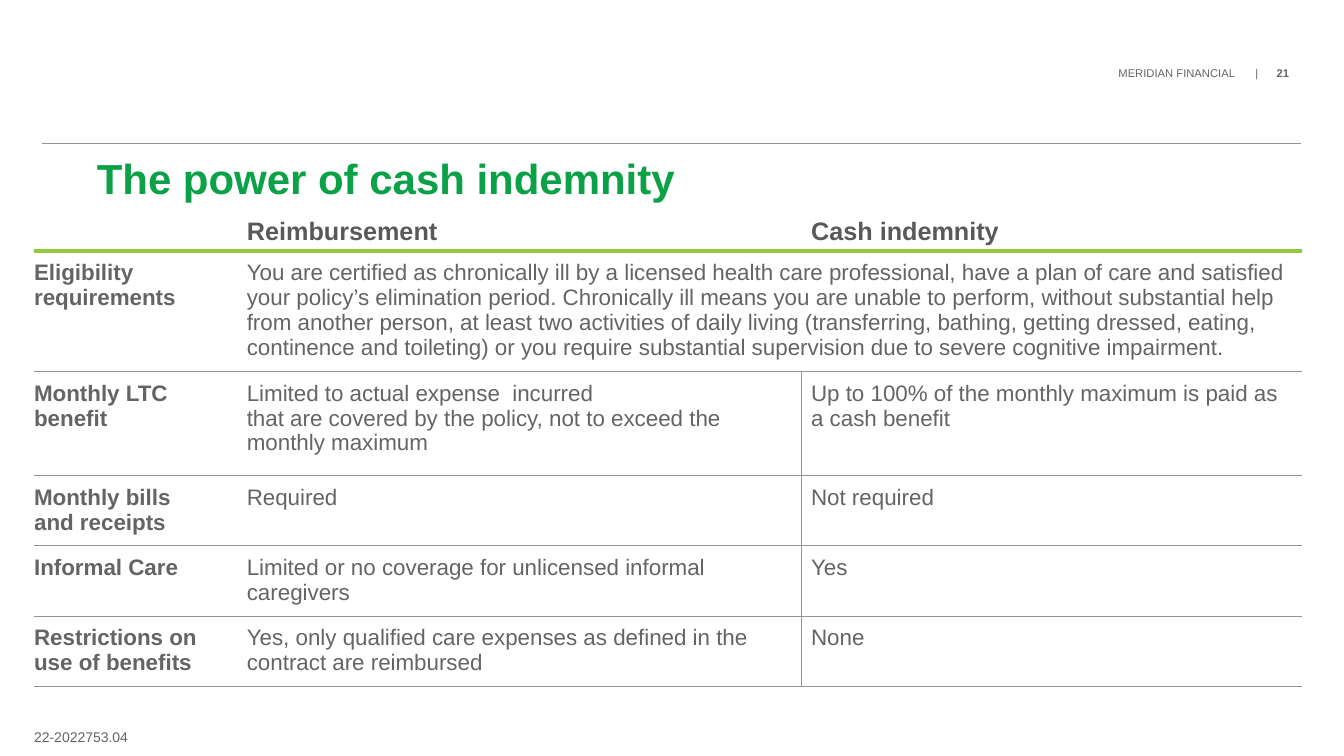
"""Build the slide comparing reimbursement with cash indemnity."""
from dataclasses import dataclass

from lxml import etree
from pptx import Presentation
from pptx import util as u
from pptx.dml.color import RGBColor
from pptx.enum import shapes, text
from pptx.oxml import ns

GREEN = RGBColor(0x0A, 0xA1, 0x47)
LIME = RGBColor(0x95, 0xC9, 0x3C)
HEAD = RGBColor(0x58, 0x59, 0x5B)
BODY = RGBColor(0x63, 0x64, 0x66)
RULE = RGBColor(0x92, 0x93, 0x97)
WHITE = RGBColor(0xFF, 0xFF, 0xFF)

COLUMNS = (5.11, 14.22, 12.6)
HEIGHTS = (1.52, 3.03, 2.63, 1.77, 1.77, 1.77)
ROWS = (
    ("", "Reimbursement", "Cash indemnity"),
    ("Eligibility requirements",
     "You are certified as chronically ill by a licensed health care professional, "
     "have a plan of care and satisfied your policy’s elimination period. "
     "Chronically ill means you are unable to perform, without substantial help from "
     "another person, at least two activities of daily living (transferring, bathing, "
     "getting dressed, eating, continence and toileting) or you require substantial "
     "supervision due to severe cognitive impairment.", ""),
    ("Monthly LTC benefit",
     "Limited to actual expense  incurred \vthat are covered by the policy, "
     "not to exceed the monthly maximum",
     "Up to 100% of the monthly maximum is paid as a cash benefit"),
    ("Monthly bills \vand receipts", "Required", "Not required"),
    ("Informal Care", "Limited or no coverage for unlicensed informal caregivers", "Yes"),
    ("Restrictions on \vuse of benefits",
     "Yes, only qualified care expenses as defined in the contract are reimbursed", "None"),
)


@dataclass
class Border:
    color: RGBColor
    width: float


THIN = Border(RULE, 0.5)
THICK = Border(LIME, 3)
BLANK = Border(WHITE, 1)


@dataclass
class Label:
    runs: tuple[tuple[str, bool], ...]
    left: float
    top: float
    width: float
    height: float
    size: float
    color: RGBColor
    format: dict
    anchor: text.MSO_ANCHOR = text.MSO_ANCHOR.TOP
    tabs: tuple[float, ...] = ()


LABELS = (
    Label((("MERIDIAN FINANCIAL\t|\t", False), ("21", True)), 26.75, 1.68, 5.74, 0.38,
          8, BODY, {"alignment": text.PP_ALIGN.RIGHT}, tabs=(3.45, 3.99)),
    Label((("The power of cash indemnity", True),), 2.44, 4.01, 27.13, 1.55,
          30, GREEN, {"line_spacing": u.Pt(31)}),
    Label((("22-2022753.04", False),), 0.86, 18.36, 6.83, 0.43,
          10, BODY, {}, text.MSO_ANCHOR.BOTTOM),
)


def apply(target: object, values: dict) -> None:
    """Set each named attribute on the target."""
    for name, value in values.items():
        setattr(target, name, value)


def style(font: object, size: float, bold: bool, color: RGBColor) -> None:
    """Set the typeface, size, weight and colour."""
    apply(font, {"name": "Arial", "size": u.Pt(size), "bold": bold})
    font.color.rgb = color


def add_label(s: object, label: Label) -> None:
    """Draw a text box without margins."""
    sp = s.shapes.add_textbox(*map(u.Cm, (label.left, label.top, label.width, label.height)))
    tf = sp.text_frame
    apply(tf, {"margin_left": 0, "margin_right": 0, "margin_top": 0, "margin_bottom": 0,
               "word_wrap": True, "vertical_anchor": label.anchor})
    p = tf.paragraphs[0]
    apply(p, label.format)
    if label.tabs:
        stops = etree.SubElement(p._p.get_or_add_pPr(), ns.qn("a:tabLst"))
        for stop in label.tabs:
            etree.SubElement(stops, ns.qn("a:tab"), pos=str(u.Cm(stop)), algn="l")
    for words, bold in label.runs:
        r = p.add_run()
        r.text = words
        style(r.font, label.size, bold, label.color)


def add_rule(s: object) -> None:
    """Draw the line above the title."""
    line = s.shapes.add_connector(shapes.MSO_CONNECTOR.STRAIGHT, u.Cm(1.06), u.Cm(3.61),
                                  u.Cm(32.79), u.Cm(3.61))
    line.line.color.rgb = RULE
    line.line.width = u.Pt(0.5)
    etree.SubElement(line._element.spPr, ns.qn("a:effectLst"))


def set_borders(cell: object, borders: dict[str, Border]) -> None:
    """Add cell borders keyed by side, in schema order."""
    for side, border in borders.items():
        ln = etree.SubElement(cell._tc.get_or_add_tcPr(), ns.qn(f"a:ln{side}"),
                              w=str(u.Pt(border.width)))
        fill = etree.SubElement(ln, ns.qn("a:solidFill"))
        etree.SubElement(fill, ns.qn("a:srgbClr"), val=str(border.color))


def fill_cell(cell: object, row: int, col: int, words: str) -> None:
    """Write and format one table cell."""
    cell.text = words
    header = row == 0
    if header:
        cell.vertical_anchor = text.MSO_ANCHOR.BOTTOM
        set_borders(cell, {"B": THICK})
    else:
        margin = u.Cm(0.25)
        apply(cell, {"margin_left": margin if col else 0, "margin_right": margin,
                     "margin_top": margin, "margin_bottom": margin})
        split = row > 1
        set_borders(cell, {"L": THIN if split and col == 2 else BLANK,
                           "R": THIN if split and col == 1 else BLANK,
                           "T": THIN if split else THICK, "B": THIN})
    cell.fill.background()
    for p in cell.text_frame.paragraphs:
        look = (18, True, HEAD) if header else (16, col == 0, BODY)
        style(p.font, *look)
        for r in p.runs:
            style(r.font, *look)


def add_comparison(s: object) -> None:
    """Draw the comparison table."""
    table = s.shapes.add_table(len(ROWS), len(COLUMNS), u.Cm(0.86), u.Cm(4.8),
                               u.Cm(sum(COLUMNS)), u.Cm(sum(HEIGHTS))).table
    apply(table, {"first_row": False, "horz_banding": False})
    for column, width in zip(table.columns, COLUMNS):
        column.width = u.Cm(width)
    for row, height in zip(table.rows, HEIGHTS):
        row.height = u.Cm(height)
    for i, words in enumerate(ROWS):
        for j, content in enumerate(words):
            fill_cell(table.cell(i, j), i, j, content)
    table.cell(1, 1).merge(table.cell(1, 2))


def main() -> None:
    """Build and save the presentation."""
    prs = Presentation()
    apply(prs, {"slide_width": u.Cm(33.87), "slide_height": u.Cm(19.05)})
    s = prs.slides.add_slide(prs.slide_layouts[6])
    add_rule(s)
    add_comparison(s)
    for label in LABELS:
        add_label(s, label)
    prs.save("out.pptx")


if __name__ == "__main__":
    main()
